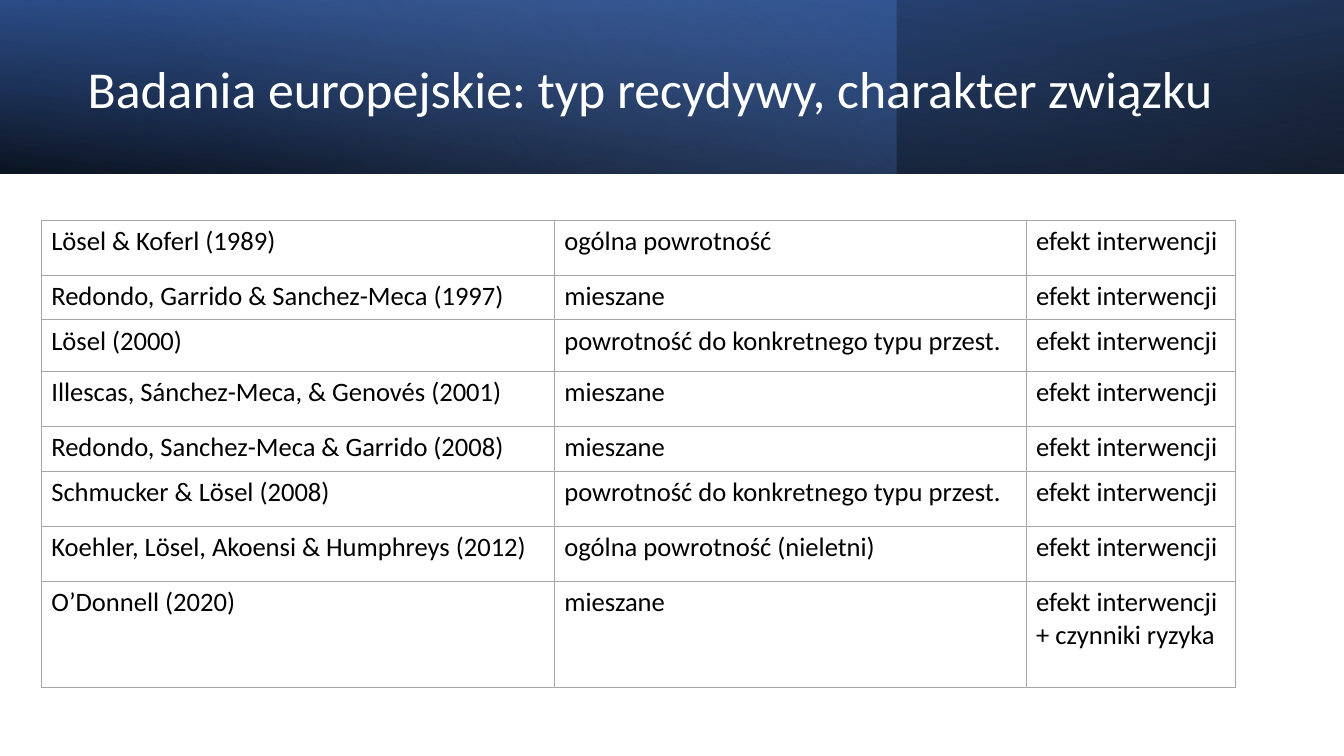
from lxml.etree import SubElement
from pptx import Presentation
from pptx.dml.color import RGBColor
from pptx.enum.shapes import MSO_SHAPE
from pptx.enum.text import MSO_ANCHOR
from pptx.oxml import parse_xml
from pptx.oxml.ns import nsdecls, qn
from pptx.util import Cm, Pt

COLOURS = {
    "white": "FFFFFF",
    "black": "000000",
    "blue": "4472C4",
    "dark blue": "2F5597",
    "light blue": "8FAADC",
    "grey": "A6A6A6",
}
TITLE_FORMAT = {"name": "Calibri", "size": Pt(37), "bold": False}
CELL_FORMAT = {"name": "Calibri", "size": Pt(19), "bold": False}

SLIDE_WIDTH, SLIDE_HEIGHT = 33.87, 19.05
BANNER_HEIGHT = 4.37

EFFECT = "efekt interwencji"
MIXED = "mieszane"
SPECIFIC = "powrotność do konkretnego typu przest."
STUDIES = [
    ("Lösel & Koferl (1989)", "ogólna powrotność", EFFECT),
    ("Redondo, Garrido & Sanchez-Meca (1997)", MIXED, EFFECT),
    ("Lösel (2000)", SPECIFIC, EFFECT),
    ("Illescas, Sánchez-Meca, & Genovés (2001)", MIXED, EFFECT),
    ("Redondo, Sanchez-Meca & Garrido (2008)", MIXED, EFFECT),
    ("Schmucker & Lösel (2008)", SPECIFIC, EFFECT),
    ("Koehler, Lösel, Akoensi & Humphreys (2012)", "ogólna powrotność (nieletni)", EFFECT),
    ("O’Donnell (2020)", MIXED, EFFECT + "\n+ czynniki ryzyka"),
]
COLUMN_WIDTHS = [12.93, 11.89, 5.28]
ROW_HEIGHTS = [1.39, 1.13, 1.3, 1.39, 1.13, 1.39, 1.39, 2.67]


def format_font(font, values, colour):
    for name, value in values.items():
        setattr(font, name, value)
    font.color.rgb = RGBColor.from_string(COLOURS[colour])


def add_banner_layer(slide, width, stops, angle, rotation=0, flipped=False):
    """Add a gradient band; stops are (position %, colour, opacity %)."""
    shape = slide.shapes.add_shape(MSO_SHAPE.RECTANGLE, 0, 0, Cm(width), Cm(BANNER_HEIGHT))
    shape.shadow.inherit = False
    shape.line.fill.background()
    shape.rotation = rotation
    properties = shape.element.spPr
    if flipped:
        properties.find(qn("a:xfrm")).set("flipH", "1")
    stop_list = "".join(
        f'<a:gs pos="{position * 1000}"><a:srgbClr val="{COLOURS[colour]}">'
        f'<a:alpha val="{opacity * 1000}"/></a:srgbClr></a:gs>'
        for position, colour, opacity in stops
    )
    gradient = parse_xml(
        f'<a:gradFill {nsdecls("a")} rotWithShape="1"><a:gsLst>{stop_list}</a:gsLst>'
        f'<a:lin ang="{angle * 60000}" scaled="0"/></a:gradFill>'
    )
    properties.find(qn("a:prstGeom")).addnext(gradient)


def add_title(slide, text):
    box = slide.shapes.add_textbox(Cm(1.96), Cm(0.69), Cm(29.39), Cm(3.23))
    frame = box.text_frame
    frame.word_wrap = True
    frame.vertical_anchor = MSO_ANCHOR.MIDDLE
    paragraph = frame.paragraphs[0]
    paragraph.text = text
    paragraph.line_spacing = 0.9
    format_font(paragraph.font, TITLE_FORMAT, "white")


def add_borders(cell):
    properties = cell._tc.get_or_add_tcPr()
    for side in ("lnL", "lnR", "lnT", "lnB"):
        line = SubElement(properties, qn(f"a:{side}"), w=str(Pt(0.5)))
        fill = SubElement(line, qn("a:solidFill"))
        SubElement(fill, qn("a:srgbClr"), val=COLOURS["grey"])


def add_study_table(slide):
    table = slide.shapes.add_table(
        len(STUDIES), len(COLUMN_WIDTHS), Cm(1.04), Cm(5.54),
        Cm(sum(COLUMN_WIDTHS)), Cm(sum(ROW_HEIGHTS)),
    ).table
    table.first_row = False
    table.horz_banding = False
    for column, width in zip(table.columns, COLUMN_WIDTHS):
        column.width = Cm(width)
    for row, height, study in zip(table.rows, ROW_HEIGHTS, STUDIES):
        row.height = Cm(height)
        for cell, text in zip(row.cells, study):
            cell.text = text
            add_borders(cell)
            cell.fill.background()
            for paragraph in cell.text_frame.paragraphs:
                format_font(paragraph.font, CELL_FORMAT, "black")


def main():
    presentation = Presentation()
    presentation.slide_width = Cm(SLIDE_WIDTH)
    presentation.slide_height = Cm(SLIDE_HEIGHT)
    slide = presentation.slides.add_slide(presentation.slide_layouts[6])

    add_banner_layer(slide, SLIDE_WIDTH, [(0, "black", 96), (100, "dark blue", 100)],
                     100, rotation=180, flipped=True)
    add_banner_layer(slide, 22.58, [(0, "blue", 41), (74, "light blue", 0)], 140)
    add_banner_layer(slide, SLIDE_WIDTH, [(0, "black", 63), (78, "blue", 15)],
                     260, flipped=True)
    add_title(slide, "Badania europejskie: typ recydywy, charakter związku")
    add_study_table(slide)

    presentation.save("out.pptx")


if __name__ == "__main__":
    main()
